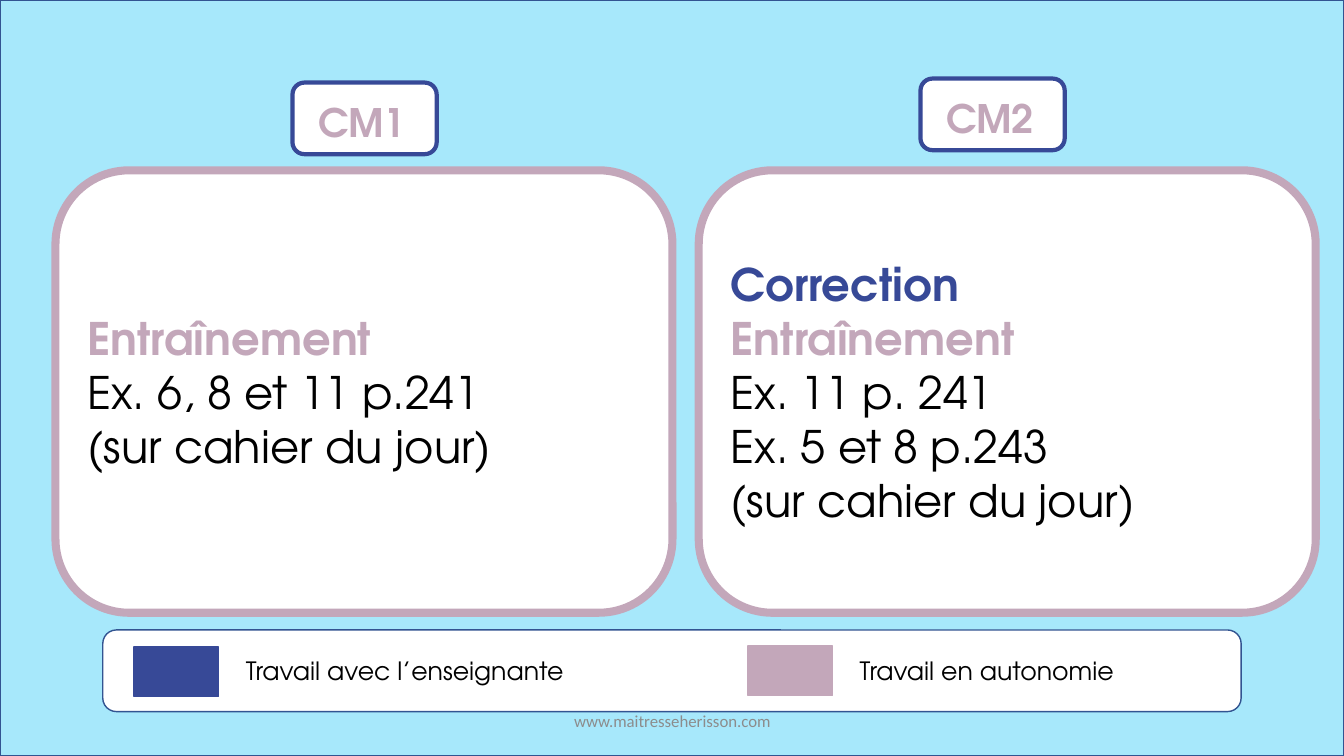
from dataclasses import dataclass

from lxml import etree
from pptx import Presentation
from pptx.dml.color import RGBColor
from pptx.enum.shapes import MSO_SHAPE
from pptx.enum.text import MSO_ANCHOR, MSO_AUTO_SIZE, PP_ALIGN
from pptx.oxml.ns import qn
from pptx.util import Inches, Pt

RECT, ROUND = MSO_SHAPE.RECTANGLE, MSO_SHAPE.ROUNDED_RECTANGLE
TOP, MIDDLE = MSO_ANCHOR.TOP, MSO_ANCHOR.MIDDLE
LEFT, CENTER = PP_ALIGN.LEFT, PP_ALIGN.CENTER
FIXED = MSO_AUTO_SIZE.NONE

SKY = RGBColor(0xA7, 0xE8, 0xFB)
NAVY = RGBColor(0x32, 0x54, 0x91)
BLUE = RGBColor(0x37, 0x49, 0x97)
MAUVE = RGBColor(0xC3, 0xA7, 0xBA)
WHITE = RGBColor(0xFF, 0xFF, 0xFF)
BLACK = RGBColor(0, 0, 0)
GRAY = RGBColor(0x8C, 0x8C, 0x8C)
FONT = "TeX Gyre Adventor"
COLORS = {"Correction": BLUE, "Entraînement": MAUVE}

deck = Presentation()
deck.slide_width, deck.slide_height = Inches(13.33), Inches(7.5)
slide = deck.slides.add_slide(deck.slide_layouts[4])
shapes = slide.shapes


@dataclass
class Box:
    """Area in percent of the slide's width and height."""
    x: float
    y: float
    w: float
    h: float

    def area(self) -> tuple[int, int, int, int]:
        """Give left, top, width and height in slide units."""
        wide, high = deck.slide_width / 100, deck.slide_height / 100
        return (round(self.x * wide), round(self.y * high),
                round(self.w * wide), round(self.h * high))


@dataclass
class Group:
    """One class: its badge, panel and placeholder numbers."""
    name: str
    badge: Box
    panel: Box
    head: int
    body: int
    tasks: list[str]


@dataclass
class Key:
    """One legend entry."""
    text: str
    color: RGBColor
    x: float
    y: float


def draw(kind: int, box: Box, fill: RGBColor, line: RGBColor, width: float) -> None:
    """Draw a plain filled shape."""
    shape = shapes.add_shape(kind, *box.area())
    shape.shadow.inherit = False
    shape.fill.solid()
    shape.fill.fore_color.rgb = fill
    shape.line.color.rgb = line
    shape.line.width = Pt(width)


def style(shape, text: str, size: float, color: RGBColor, bold: bool = False,
          font: str = FONT, anchor=TOP, align=LEFT) -> None:
    """Set and format a shape's text."""
    frame = shape.text_frame
    frame.text = text
    frame.word_wrap, frame.auto_size = True, FIXED
    frame.vertical_anchor = anchor
    for para in frame.paragraphs:
        para.alignment = align
        para.space_before = Pt(0)
        for run in para.runs:
            run.font.name, run.font.size = font, Pt(size)
            run.font.color.rgb = COLORS.get(run.text, color)
            run.font.bold = bold or run.text in COLORS


def note(box: Box, text: str, size: float, color: RGBColor, **look) -> None:
    """Add a text box."""
    style(shapes.add_textbox(*box.area()), text, size, color, **look)


def place(idx: int, box: Box, text: str, size: float, color: RGBColor, **look) -> None:
    """Fill a placeholder, without bullets, in front of the shapes so far."""
    holder = slide.placeholders[idx]
    holder.left, holder.top, holder.width, holder.height = box.area()
    style(holder, text, size, color, **look)
    for para in holder.text_frame.paragraphs:
        props = para._p.get_or_add_pPr()
        props.set("marL", "0")
        props.set("indent", "0")
        etree.SubElement(props, qn("a:buNone"))
    shapes.element.append(holder.element)


def show(group: Group) -> None:
    """Draw a class with its badge and tasks."""
    badge, panel = group.badge, group.panel
    draw(ROUND, badge, WHITE, BLUE, 3)
    label = Box(badge.x + 1.16, badge.y + 1.47, 8.25, 7.6)
    place(group.head, label, group.name, 28, MAUVE, bold=True)
    draw(ROUND, panel, WHITE, MAUVE, 5.75)
    inner = Box(panel.x + 1.61, panel.y, panel.w - 3.22, panel.h)
    place(group.body, inner, "\n".join(group.tasks), 32, BLACK, anchor=MIDDLE)


def mark(key: Key) -> None:
    """Draw a legend swatch and its text."""
    draw(RECT, Box(key.x, key.y, 6.3, 6.53), key.color, key.color, 1)
    note(Box(key.x + 7.57, 86, 25.66, 5.33), key.text, 18, BLACK)


GROUPS = [
    Group("CM1", Box(21.76, 10.93, 10.73, 9.47), Box(4.13, 22.53, 45.91, 58.53), 1, 2,
          ["Entraînement", "Ex. 6, 8 et 11 p.241", "(sur cahier du jour)"]),
    Group("CM2", Box(68.49, 10.4, 10.73, 9.47), Box(51.99, 22.53, 45.91, 58.53), 3, 4,
          ["Correction", "Entraînement", "Ex. 11 p. 241", "Ex. 5 et 8 p.243",
           "(sur cahier du jour)"]),
]
KEYS = [
    Key("Travail avec l’enseignante", BLUE, 9.98, 85.6),
    Key("Travail en autonomie", MAUVE, 55.66, 85.47),
]


def main() -> None:
    """Build and save the slide."""
    shapes.element.remove(shapes.title.element)
    draw(RECT, Box(0, 0, 100, 100), SKY, NAVY, 1)
    for group in GROUPS:
        show(group)
    draw(ROUND, Box(7.65, 83.33, 84.7, 10.8), WHITE, NAVY, 1)
    for key in KEYS:
        mark(key)
    note(Box(33.16, 92.67, 33.76, 5.33), "www.maitresseherisson.com", 12, GRAY,
         font="Calibri", anchor=MIDDLE, align=CENTER)
    deck.save("out.pptx")


if __name__ == "__main__":
    main()
